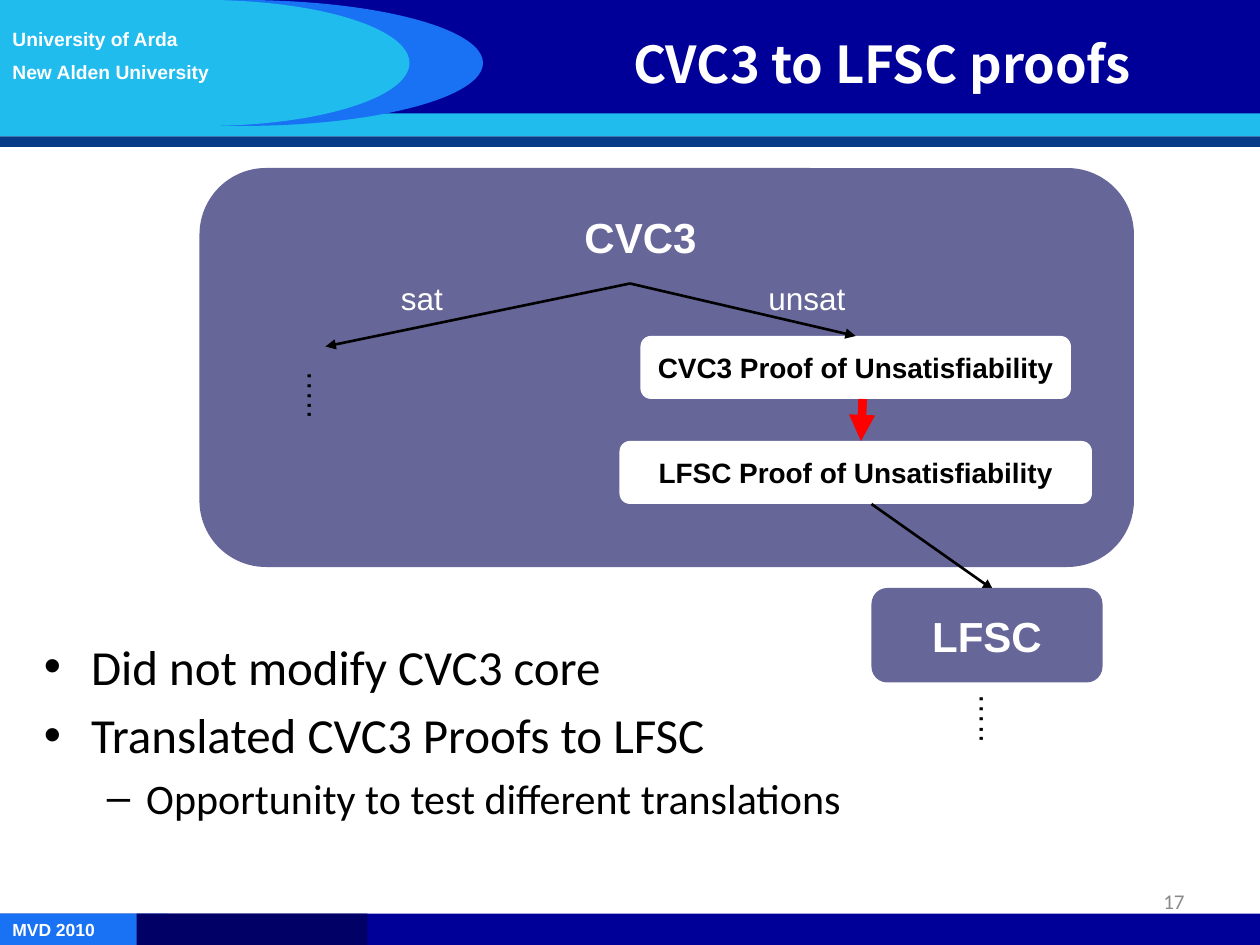
import pptx
import pptx.dml.color
import pptx.enum.shapes
import pptx.enum.text
import pptx.oxml
import pptx.oxml.ns
import pptx.util
from dataclasses import dataclass

Pt = pptx.util.Pt
SHAPE = pptx.enum.shapes.MSO_SHAPE
ALIGN = pptx.enum.text.PP_ALIGN
ANCHOR = pptx.enum.text.MSO_ANCHOR


@dataclass(frozen=True)
class Theme:
    """Colours, fonts and type sizes of the slide."""
    white: str = "FFFFFF"
    black: str = "000000"
    grey: str = "898989"
    purple: str = "666699"
    red: str = "FF0000"
    cyan: str = "1FBCED"
    blue: str = "1971F3"
    navy: str = "000099"
    midnight: str = "000066"
    steel: str = "073B87"
    sans: str = "Arial"
    body: str = "Calibri"
    heading: str = "Noto Sans CJK KR"
    title_size: float = 29
    bullet_size: float = 28
    sub_bullet_size: float = 24
    node_size: float = 24
    label_size: float = 18
    proof_size: float = 16
    page_size: float = 12
    school_size: float = 11
    footer_size: float = 10


THEME = Theme()


def rgb(color):
    """Return a colour object for a hex string."""
    return pptx.dml.color.RGBColor.from_string(color)


def element(tag, attributes=""):
    """Return an empty drawing element with the given attributes."""
    return pptx.oxml.parse_xml(
        f'<a:{tag} {pptx.oxml.ns.nsdecls("a")} {attributes}/>')


def write(paragraph, text, size, color, font=THEME.sans, bold=False, **layout):
    """Write one formatted run and set the paragraph's layout values."""
    run = paragraph.add_run()
    run.text = text
    for name, value in {"size": Pt(size), "name": font, "bold": bold}.items():
        setattr(run.font, name, value)
    run.font.color.rgb = rgb(color)
    for name, value in layout.items():
        setattr(paragraph, name, value)


def add_box(slide, box, fill=None, kind=SHAPE.RECTANGLE):
    """Add a borderless preset shape, unfilled when no colour is given."""
    shape = slide.shapes.add_shape(kind, *map(Pt, box))
    shape.shadow.inherit = False
    shape.line.fill.background()
    if fill:
        shape.fill.solid()
        shape.fill.fore_color.rgb = rgb(fill)
    else:
        shape.fill.background()
    return shape


def add_text(slide, box, anchor=ANCHOR.TOP, rotation=0):
    """Add an empty text box and return its text frame."""
    shape = slide.shapes.add_textbox(*map(Pt, box))
    shape.rotation = rotation
    frame = shape.text_frame
    frame.word_wrap = True
    frame.vertical_anchor = anchor
    return frame


def add_node(slide, box, text, size, color, fill=None):
    """Add a rounded box with a centred bold caption."""
    shape = add_box(slide, box, fill, SHAPE.ROUNDED_RECTANGLE)
    frame = shape.text_frame
    frame.word_wrap = False
    frame.vertical_anchor = ANCHOR.MIDDLE
    write(frame.paragraphs[0], text, size, color, bold=True, alignment=ALIGN.CENTER)
    return shape


def add_arrow(slide, start, end, color=THEME.black, width=1.5):
    """Add a straight connector with a triangle head at its end."""
    connector = slide.shapes.add_connector(
        pptx.enum.shapes.MSO_CONNECTOR.STRAIGHT, *map(Pt, (*start, *end)))
    connector.line.color.rgb = rgb(color)
    connector.line.width = Pt(width)
    connector.line._get_or_add_ln().append(element("tailEnd", 'type="triangle"'))
    connector._element.spPr.append(element("effectLst"))
    return connector


def add_header(slide, box):
    """Draw the banner with the universities and the title."""
    left, top, width, height = box
    add_box(slide, (left, top + 60, width, 18), THEME.cyan)
    add_box(slide, (left, top, width, 64.8), THEME.navy)
    for curve_width, color in ((276, THEME.blue), (234, THEME.cyan)):
        add_box(slide, (left, top, curve_width, 72), color, SHAPE.FLOWCHART_DELAY)
    add_box(slide, (left, top + height - 6, width, 6), THEME.steel)

    schools = add_text(slide, (left, top + 12, 180, 40))
    for index, name in enumerate(("University of Arda", "New Alden University")):
        paragraph = schools.add_paragraph() if index else schools.paragraphs[0]
        write(paragraph, name, THEME.school_size, THEME.white, bold=True,
              space_before=Pt(5.5))

    title = add_text(slide, (left + 300, top, 408, 72), ANCHOR.MIDDLE)
    write(title.paragraphs[0], "CVC3 to LFSC proofs", THEME.title_size,
          THEME.white, THEME.heading, True, alignment=ALIGN.CENTER)


def add_diagram(slide, box):
    """Draw the solver panel, its two outcomes and the proof checker."""
    left, top, width, height = box
    add_box(slide, box, THEME.purple, SHAPE.ROUNDED_RECTANGLE)
    add_node(slide, (left + 186, top + 12, 132, 54), "CVC3",
             THEME.node_size, THEME.white)
    solver_proof = add_node(
        slide, (left + 252, top + 96, 246, 36), "CVC3 Proof of Unsatisfiability",
        THEME.proof_size, THEME.black, THEME.white)
    add_node(slide, (left + 240, top + 156, 270, 36), "LFSC Proof of Unsatisfiability",
             THEME.proof_size, THEME.black, THEME.white)

    fork = (left + 246, top + 66)
    add_arrow(slide, fork, (left + 72, top + 102))
    unsat_arrow = add_arrow(slide, fork, (left + 375, top + 96))
    unsat_arrow.end_connect(solver_proof, 0)
    add_arrow(slide, (left + 379, top + 132), (left + 378, top + 156), THEME.red, 5)
    add_arrow(slide, (left + 384, top + 192), (left + 453.5, top + height + 13))
    add_node(slide, (left + 384, top + height + 12, 132, 54), "LFSC",
             THEME.node_size, THEME.white, THEME.purple)

    labels = (("sat", 108, 60, 46, 0, THEME.white),
              ("unsat", 318, 60, 66, 0, THEME.white),
              ("…..", 45.5, 115, 46.5, 90, THEME.black),
              ("…..", 429.5, 300, 46.5, 90, THEME.black))
    for text, x, y, label_width, rotation, color in labels:
        frame = add_text(slide, (left + x, top + y, label_width, 29),
                         rotation=rotation)
        alignment = ALIGN.CENTER if rotation else ALIGN.LEFT
        write(frame.paragraphs[0], text, THEME.label_size, color,
              alignment=alignment)


def add_bullets(slide, box):
    """Write the two-level list of remarks."""
    levels = ({"marL": 27, "indent": -27, "bullet": "•", "size": THEME.bullet_size},
              {"marL": 58.5, "indent": -22.5, "bullet": "–", "size": THEME.sub_bullet_size})
    remarks = (("Did not modify CVC3 core", 0),
               ("Translated CVC3 Proofs to LFSC", 0),
               ("Opportunity to test different translations", 1))
    frame = add_text(slide, box)
    for index, (text, level) in enumerate(remarks):
        style = levels[level]
        paragraph = frame.add_paragraph() if index else frame.paragraphs[0]
        write(paragraph, text, style["size"], THEME.black, THEME.body,
              level=level, space_before=Pt(style["size"] * 0.2))
        properties = paragraph._p.get_or_add_pPr()
        for name in ("marL", "indent"):
            properties.set(name, str(Pt(style[name])))
        properties.append(element("buFont", f'typeface="{THEME.sans}"'))
        properties.append(element("buChar", f'char="{style["bullet"]}"'))


def add_footer(slide, box):
    """Draw the bottom bar, the event name and the page number."""
    left, top, width, height = box
    add_box(slide, box, THEME.navy)
    event = add_box(slide, (left, top, 96, height), THEME.blue).text_frame
    event.vertical_anchor = ANCHOR.MIDDLE
    write(event.paragraphs[0], "MVD 2010", THEME.footer_size, THEME.white,
          bold=True, alignment=ALIGN.LEFT)
    add_box(slide, (left + 78, top, 132, height), THEME.midnight)
    page = add_text(slide, (left + 516, top - 21.5, 168, 28.8), ANCHOR.MIDDLE)
    write(page.paragraphs[0], "17", THEME.page_size, THEME.grey, THEME.body,
          alignment=ALIGN.RIGHT)


def main():
    """Build and save the slide."""
    presentation = pptx.Presentation()
    presentation.slide_width, presentation.slide_height = Pt(720), Pt(540)
    slide = presentation.slides.add_slide(presentation.slide_layouts[6])
    add_diagram(slide, (114, 96, 534, 228))
    add_bullets(slide, (18, 360, 570, 138))
    add_header(slide, (0, 0, 720, 84))
    add_footer(slide, (0, 522, 720, 18))
    presentation.save("out.pptx")


if __name__ == "__main__":
    main()
